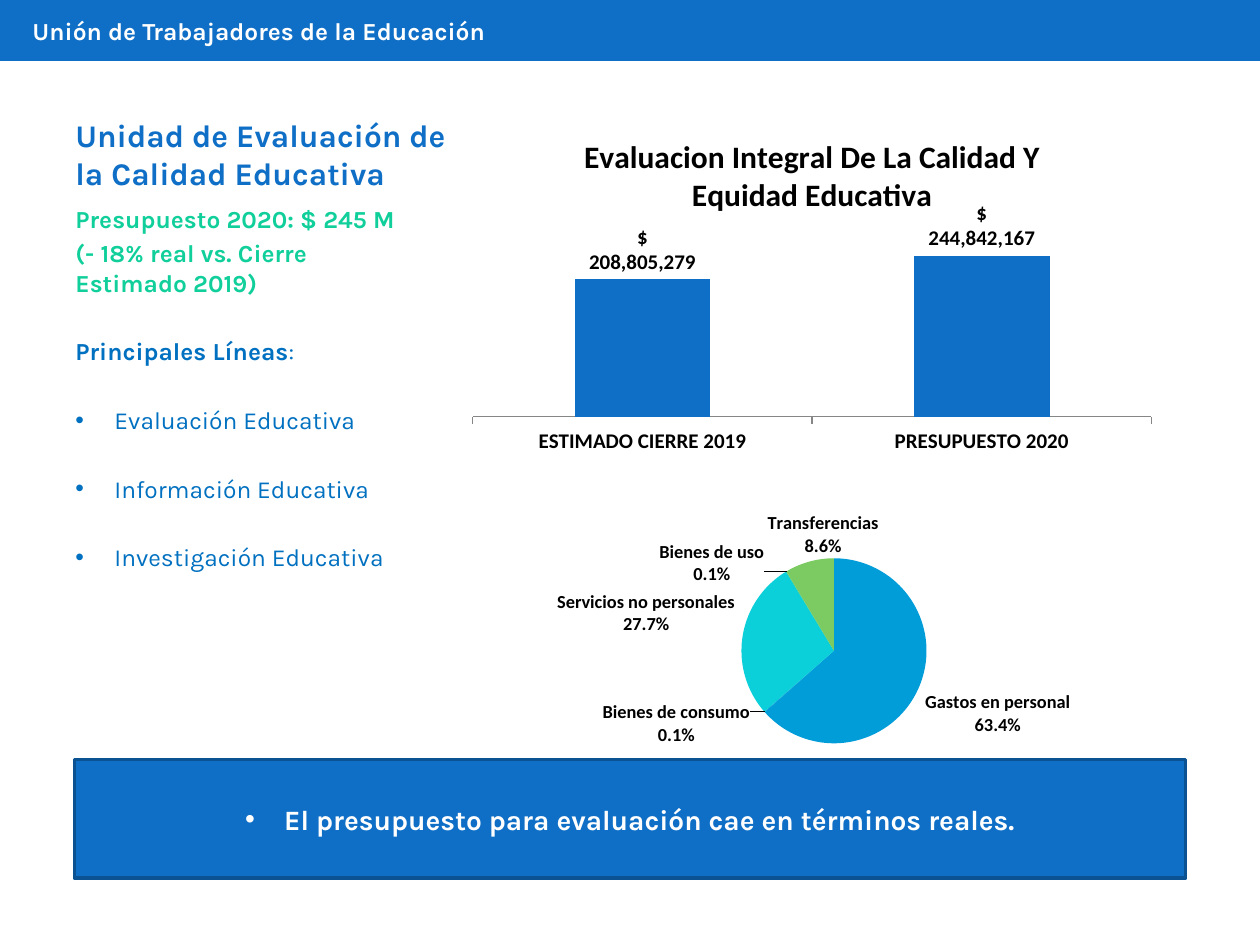
from copy import deepcopy
from pptx import Presentation
from pptx.chart.data import CategoryChartData
from pptx.dml.color import RGBColor
from pptx.enum import chart as ch, shapes, text
from pptx.oxml import parse_xml
from pptx.oxml.ns import nsdecls
from pptx.util import Inches, Pt

BLUE = "0F6FC6"


def tint(code):
    return RGBColor.from_string(code)


def write(frame, words, size=14, color="0070C0", bold=True, before=0, bullet=False, align=None, first=False):
    para = frame.paragraphs[0] if first else frame.add_paragraph()
    para.space_before = Pt(before)
    para.alignment = align
    if bullet:
        props = para._p.get_or_add_pPr()
        props.set("marL", str(Inches(0.31)))
        props.set("indent", str(Inches(-0.31)))
        props.append(parse_xml(f'<a:buFont {nsdecls("a")} typeface="Arial"/>'))
        props.append(parse_xml(f'<a:buChar {nsdecls("a")} char="•"/>'))
    run = para.add_run()
    run.text = words
    run.font.name = "Karla"
    run.font.size = Pt(size)
    run.font.bold = bold
    run.font.color.rgb = tint(color)
    return para


prs = Presentation()
prs.slide_width, prs.slide_height = Inches(10), Inches(7.5)
slide = prs.slides.add_slide(prs.slide_layouts[6])

boxes = []
for left, top, wide, high in [(0.5, 0.6, 3.29, 0.97), (0.5, 1.57, 2.85, 3.3)]:
    box = slide.shapes.add_textbox(Inches(left), Inches(top), Inches(wide), Inches(high))
    box.text_frame.word_wrap = True
    boxes.append(box.text_frame)
title, body = boxes
title.vertical_anchor = text.MSO_ANCHOR.BOTTOM
write(title, "Unidad de Evaluación de la Calidad Educativa", size=18, color=BLUE, first=True)

write(body, "Presupuesto 2020: $ 245 M", color="10CF9B", before=2.8, first=True)
write(body, "(- 18% real vs. Cierre Estimado 2019)", color="10CF9B", before=2.8)
lead = write(body, "Principales Líneas", before=22.4)
colon = lead.add_run()
colon.text = ":"
colon.font.name = "Karla"
colon.font.size = Pt(14)
colon.font.color.rgb = tint("0070C0")
for line in ["Evaluación Educativa", "Información Educativa", "Investigación Educativa"]:
    write(body, line, bold=False, before=22.4, bullet=True)

bars = []
for left, top, wide, high, edge in [(0, 0, 10, 0.47, BLUE), (0.59, 6.03, 8.82, 0.94, "0B5292")]:
    bar = slide.shapes.add_shape(shapes.MSO_SHAPE.RECTANGLE, Inches(left), Inches(top), Inches(wide), Inches(high))
    bar.shadow.inherit = False
    bar.fill.solid()
    bar.fill.fore_color.rgb = tint(BLUE)
    bar.line.color.rgb = tint(edge)
    bar.line.width = Pt(2)
    bars.append(bar)
head = slide.shapes.add_textbox(Inches(0.16), Inches(0.08), Inches(9.16), Inches(0.34)).text_frame
head.word_wrap = True
write(head, "Unión de Trabajadores de la Educación", color="FFFFFF", first=True)
note = bars[1].text_frame
note.vertical_anchor = text.MSO_ANCHOR.MIDDLE
write(note, "El presupuesto para evaluación cae en términos reales.", size=16, color="FFFFFF",
      bullet=True, align=text.PP_ALIGN.CENTER, first=True)

name = "Evaluacion Integral De La Calidad Y Equidad Educativa"
plans = [
    (ch.XL_CHART_TYPE.COLUMN_CLUSTERED, (3.58, 0.92, 5.73, 2.68), name,
     {"ESTIMADO CIERRE 2019": 208805279, "PRESUPUESTO 2020": 244842167},
     (0.03, 0.31, 0.94, 0.59), '"$"\\ #,##0', 12),
    (ch.XL_CHART_TYPE.PIE, (3.11, 3.91, 7.09, 2.37), "Series 1",
     {"Gastos en personal": 63.4, "Bienes de consumo": 0.1, "Servicios no personales": 27.7,
      "Bienes de uso": 0.1, "Transferencias": 8.6},
     (0.39, 0.22, 0.21, 0.62), '0.0"%"', 10.5),
]
charts = []
for kind, place, label, data, area, mask, size in plans:
    feed = CategoryChartData()
    feed.categories = list(data)
    feed.add_series(label, list(data.values()))
    chart = slide.shapes.add_chart(kind, *[Inches(n) for n in place], feed).chart
    chart.has_legend = False
    chart.has_title = False
    chart.font.name = "Calibri"
    chart.font.size = Pt(10)
    chart.font.color.rgb = tint("000000")
    tags = chart.plots[0].series[0].data_labels
    tags.show_value = True
    tags.number_format = mask
    tags.number_format_is_linked = False
    tags.position = ch.XL_LABEL_POSITION.OUTSIDE_END
    tags.font.size = Pt(size)
    tags.font.bold = True
    spots = "".join(f'<c:{key} val="{val}"/>' for key, val in zip("xywh", area))
    grid = chart._chartSpace.chart.plotArea
    for old in grid.findall("{*}layout"):
        grid.remove(old)
    grid.insert(0, parse_xml(
        f'<c:layout {nsdecls("c")}><c:manualLayout><c:layoutTarget val="inner"/>'
        f'<c:xMode val="edge"/><c:yMode val="edge"/>{spots}</c:manualLayout></c:layout>'))
    charts.append(chart)

cols, pie = charts
cols.has_title = True
cols.chart_title.text_frame.text = name
font = cols.chart_title.text_frame.paragraphs[0].runs[0].font
font.name, font.size, font.bold = "Calibri", Pt(18), True
font.color.rgb = tint("000000")
cols.plots[0].gap_width = 150
cols.plots[0].vary_by_categories = False
fill = cols.plots[0].series[0].format.fill
fill.solid()
fill.fore_color.rgb = tint(BLUE)
cols.category_axis.tick_labels.font.size = Pt(12)
cols.category_axis.tick_labels.font.bold = True
cols.category_axis.format.line.color.rgb = tint("868686")
axis = cols.value_axis
axis.visible = False
axis.has_major_gridlines = False
axis.minimum_scale, axis.maximum_scale = 0, 300000000

pie.plots[0].vary_by_categories = True
ring = pie.plots[0].series[0]
for i, code in enumerate(["009DD9", "009DD9", "0BD0D9", "10CF9B", "7CCA62"]):
    fill = ring.points[i].format.fill
    fill.solid()
    fill.fore_color.rgb = tint(code)

ring.data_labels.show_category_name = True
tags = ring.data_labels._element
tags.find("{*}showBubbleSize").addnext(parse_xml(f'<c:separator {nsdecls("c")}>\n</c:separator>'))
parts = [part for part in tags if not part.tag.endswith("showLeaderLines")]
shifts = [(1, -0.01, -0.05, "outEnd"), (2, 0, 0, "bestFit"), (3, -0.02, 0.07, "outEnd"), (4, 0.08, 0.01, "outEnd")]
for rank, (i, across, down, spot) in enumerate(shifts):
    move = f'<c:manualLayout><c:x val="{across}"/><c:y val="{down}"/></c:manualLayout>' if across else ""
    tag = parse_xml(f'<c:dLbl {nsdecls("c")}><c:idx val="{i}"/><c:layout>{move}</c:layout></c:dLbl>')
    tag.extend([deepcopy(part) for part in parts])
    tag.find("{*}dLblPos").set("val", spot)
    tags.insert(rank, tag)

prs.save("out.pptx")
